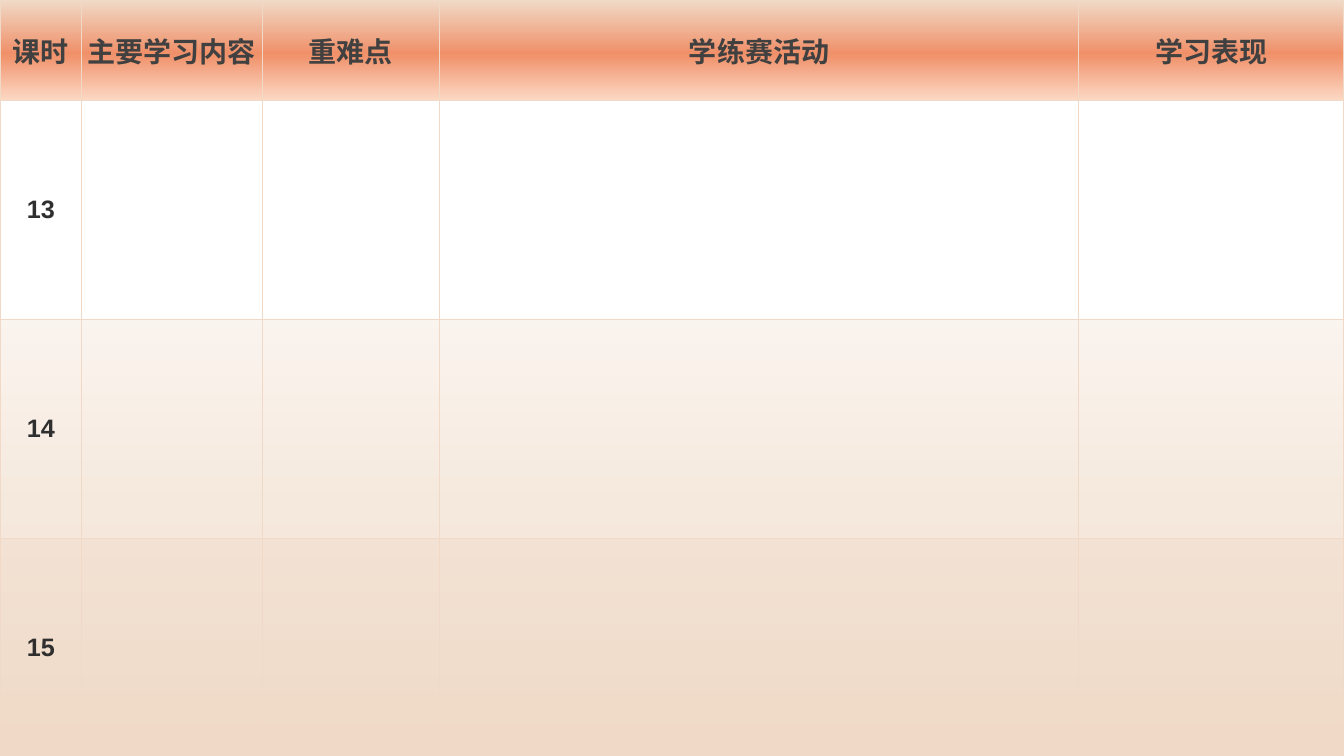
from pptx import Presentation
from pptx.dml.color import RGBColor
from pptx.enum.text import MSO_ANCHOR, PP_ALIGN
from pptx.oxml import parse_xml
from pptx.oxml.ns import nsdecls, qn
from pptx.util import Inches, Pt

COLORS = {
    "sand": "F0DAC7",
    "orange": "F09069",
    "peach": "FCD9C5",
    "white": "FFFFFF",
    "header_text": "404040",
    "body_text": "2F2F2F",
}
HEADERS = ["课时", "主要学习内容", "重难点", "学练赛活动", "学习表现"]
LESSONS = ["13", "14", "15"]
LESSON_OPACITY = [0, 25, 50]
COLUMN_WIDTHS = [0.81, 1.79, 1.76, 6.34, 2.63]
ROW_HEIGHTS = [1] + [2.17] * len(LESSONS)


def gradient_fill(stops, angle):
    """Return a linear gradient; stops are (percent, color name) pairs."""
    stop_xml = "".join(
        f'<a:gs pos="{percent * 1000}"><a:srgbClr val="{COLORS[name]}"/></a:gs>'
        for percent, name in stops
    )
    return parse_xml(
        f'<a:gradFill {nsdecls("a")} rotWithShape="1"><a:gsLst>{stop_xml}</a:gsLst>'
        f'<a:lin ang="{angle * 60000}" scaled="0"/></a:gradFill>'
    )


def write_cell(cell, text, size, color, margin):
    cell.vertical_anchor = MSO_ANCHOR.MIDDLE
    cell.margin_left = cell.margin_right = Inches(margin)
    cell.margin_top = cell.margin_bottom = Inches(margin)
    paragraph = cell.text_frame.paragraphs[0]
    paragraph.alignment = PP_ALIGN.CENTER
    run = paragraph.add_run()
    run.text = text
    run.font.name = "Arial"
    run.font.size = Pt(size)
    run.font.bold = True
    run.font.color.rgb = RGBColor.from_string(COLORS[color])


presentation = Presentation()
presentation.slide_width = Inches(13.33)
presentation.slide_height = Inches(7.5)
slide = presentation.slides.add_slide(presentation.slide_layouts[6])

# Background
slide.background.fill.solid()
background = slide.element.find(".//" + qn("p:bgPr"))
background[0] = gradient_fill([(0, "sand"), (61, "white")], 270)

# Table grid
table = slide.shapes.add_table(
    len(ROW_HEIGHTS), len(COLUMN_WIDTHS), 0, 0, Inches(13.33), Inches(7.5)
).table
table.first_row = True
table.horz_banding = False
for column, width in zip(table.columns, COLUMN_WIDTHS):
    column.width = Inches(width)
for row, height in zip(table.rows, ROW_HEIGHTS):
    row.height = Inches(height)

# Borders and fills
for row_index, row in enumerate(table.rows):
    for cell in row.cells:
        properties = cell._tc.get_or_add_tcPr()
        for side in ("lnL", "lnR", "lnT", "lnB"):
            properties.append(parse_xml(
                f'<a:{side} {nsdecls("a")} w="{Pt(1)}"><a:solidFill>'
                f'<a:srgbClr val="{COLORS["sand"]}"/></a:solidFill></a:{side}>'
            ))
        if row_index == 0:
            properties.append(gradient_fill([(0, "sand"), (53, "orange"), (100, "peach")], 90))
            continue
        opacity = LESSON_OPACITY[row_index - 1]
        if opacity == 0:
            cell.fill.background()
            continue
        cell.fill.solid()
        cell.fill.fore_color.rgb = RGBColor.from_string(COLORS["sand"])
        fill_color = properties.find(qn("a:solidFill"))[0]
        fill_color.append(parse_xml(f'<a:alpha {nsdecls("a")} val="{opacity * 1000}"/>'))

# Text
for column_index, header in enumerate(HEADERS):
    write_cell(table.cell(0, column_index), header, size=20, color="header_text", margin=0.04)
for row_index, lesson in enumerate(LESSONS, start=1):
    write_cell(table.cell(row_index, 0), lesson, size=18, color="body_text", margin=0.1)

presentation.save("out.pptx")
